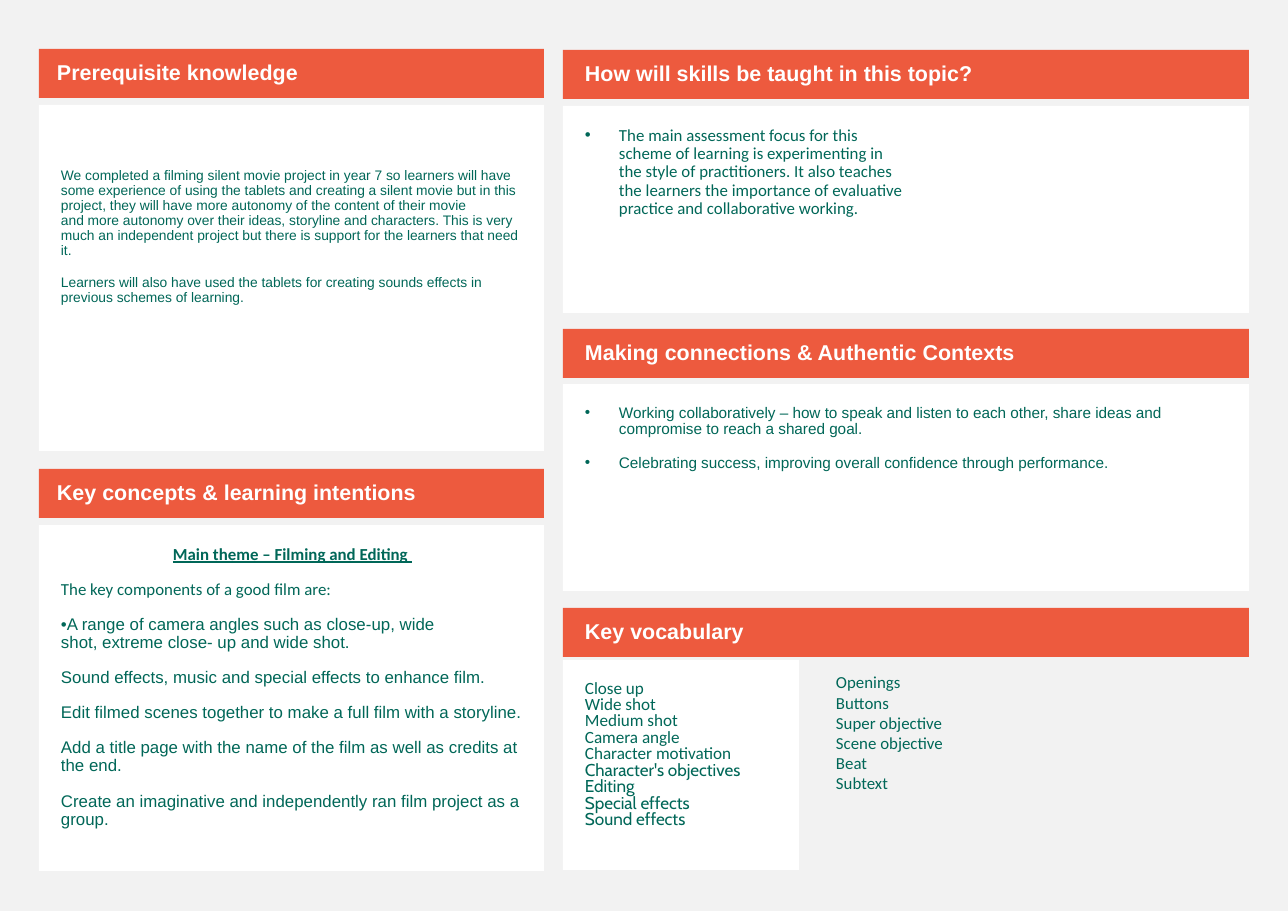
from dataclasses import dataclass

from lxml import etree
from pptx import Presentation
from pptx.dml.color import RGBColor
from pptx.enum.shapes import MSO_SHAPE
from pptx.enum.text import MSO_ANCHOR, PP_ALIGN
from pptx.oxml.ns import qn
from pptx.util import Emu, Pt

RECTANGLE = MSO_SHAPE.RECTANGLE
TOP, MIDDLE = MSO_ANCHOR.TOP, MSO_ANCHOR.MIDDLE
LEFT, CENTER = PP_ALIGN.LEFT, PP_ALIGN.CENTER
NO_BREAK = chr(160)


@dataclass(frozen=True)
class Theme:
    background: str = "F2F2F2"
    panel: str = "FFFFFF"
    header: str = "ED5A3E"
    header_text: str = "FFFFFF"
    body_text: str = "006758"
    sans: str = "Arial"
    humanist: str = "Calibri"
    rounded: str = "Cabin"
    header_size: float = 14
    body_size: float = 11
    vocabulary_size: float = 11.2
    connections_size: float = 10
    prerequisite_size: float = 9
    paragraph_gap: float = 11


THEME = Theme()

# Content
PREREQUISITES = [
    "We completed a filming silent movie project in year 7 so learners will have "
    "some experience of using the tablets and creating a silent movie but in this "
    "project, they will have more autonomy of the content of their movie "
    f"and{NO_BREAK}more autonomy over their ideas, storyline and characters. This is very "
    "much an independent project but there is support for the learners that need it. ",
    "Learners will also have used the tablets for creating sounds effects "
    "in previous schemes of learning. ",
]
MAIN_THEME = ["Main theme – Filming and Editing "]
CONCEPT_INTRO = ["The key components of a good film are:"]
CONCEPTS = [
    "•A range of camera angles such as close-up, wide "
    f"shot,{NO_BREAK}extreme close- up and wide shot. ",
    "Sound effects, music and special effects to enhance film.",
    "Edit filmed scenes together to make a full film with a storyline.",
    "Add a title page with the name of the film as well as credits at the end.",
    "Create an imaginative and independently ran film project as a group. ",
]
SKILLS = [
    "The main assessment focus for this scheme of learning is experimenting in "
    "the style of practitioners. It also teaches the learners the importance of "
    "evaluative practice and collaborative working. ",
]
CONNECTIONS = [
    "Working collaboratively – how to speak and listen to each other, share ideas "
    "and compromise to reach a shared goal.",
    "Celebrating success, improving overall confidence through performance.",
]
SHOT_WORDS = ["Close up", "Wide shot", "Medium shot", "Camera angle", "Character motivation "]
EFFECT_WORDS = ["Character's objectives ", "Editing ", "Special effects", "Sound effects "]
DRAMA_WORDS = ["Openings", "Buttons ", "Super objective", "Scene objective ", "Beat", "Subtext"]

# Layout in px
SLIDE_WIDTH, SLIDE_HEIGHT = 1288, 911
EMU_PER_PX = 914400 / 110.2
HEADER_HEIGHT = 49
PADDING = 22
TOP_PADDING, RIGHT_PADDING = 21, 20
BULLET_INDENT = 34
LEFT_COLUMN, RIGHT_COLUMN = (39, 505), (563, 686)
VOCABULARY_COLUMN = (563, 236)

# Title, column, top, left inset
HEADERS = [
    ("Prerequisite knowledge", LEFT_COLUMN, 49, 18),
    ("Key concepts & learning intentions", LEFT_COLUMN, 469, 18),
    ("How will skills be taught in this topic?", RIGHT_COLUMN, 50, PADDING),
    ("Making connections & Authentic Contexts", RIGHT_COLUMN, 329, PADDING),
    ("Key vocabulary", RIGHT_COLUMN, 608, PADDING),
]


def px(length):
    return Emu(round(length * EMU_PER_PX))


def color(value):
    return RGBColor.from_string(value)


def style(font, size, **options):
    return dict(font=font, size=size, **options)


def set_insets(frame, left, top, right, bottom):
    frame.margin_left, frame.margin_top = px(left), px(top)
    frame.margin_right, frame.margin_bottom = px(right), px(bottom)


def add_panel(slide, column, top, height, fill, insets, anchor=TOP):
    left, width = column
    shape = slide.shapes.add_shape(RECTANGLE, px(left), px(top), px(width), px(height))
    shape.shadow.inherit = False
    shape.fill.solid()
    shape.fill.fore_color.rgb = color(fill)
    shape.line.fill.background()
    frame = shape.text_frame
    frame.word_wrap = True
    frame.vertical_anchor = anchor
    set_insets(frame, *insets)
    return frame


def add_bullet(paragraph):
    properties = paragraph._p.get_or_add_pPr()
    properties.set("marL", str(px(BULLET_INDENT)))
    properties.set("indent", str(-px(BULLET_INDENT)))
    etree.SubElement(properties, qn("a:buFont"), typeface=THEME.sans)
    etree.SubElement(properties, qn("a:buChar"), char="•")


def write(frame, lines, font, size, ink=THEME.body_text, bold=False, underline=False,
          align=LEFT, spacing=0.9, gap=THEME.paragraph_gap, bullet=False):
    for line in lines:
        first = frame.paragraphs[0]
        paragraph = frame.add_paragraph() if first.runs else first
        paragraph.alignment = align
        paragraph.line_spacing = spacing
        paragraph.space_before = Pt(gap)
        if bullet:
            add_bullet(paragraph)
        run = paragraph.add_run()
        run.text = line
        run.font.name = font
        run.font.size = Pt(size)
        run.font.bold = bold
        run.font.underline = underline
        run.font.color.rgb = color(ink)


# Body panels: column, top, height, top inset, text columns, text blocks
concept_style = style(THEME.humanist, THEME.body_size)
vocabulary = dict(size=THEME.vocabulary_size, spacing=0.8, gap=0)
PANELS = [
    (LEFT_COLUMN, 105, 346, 64, 1,
     [(PREREQUISITES, style(THEME.sans, THEME.prerequisite_size))]),
    (LEFT_COLUMN, 525, 346, TOP_PADDING, 1,
     [(MAIN_THEME, dict(concept_style, bold=True, underline=True, align=CENTER)),
      (CONCEPT_INTRO, concept_style),
      (CONCEPTS, style(THEME.sans, THEME.body_size))]),
    (RIGHT_COLUMN, 106, 207, TOP_PADDING, 2,
     [(SKILLS, dict(concept_style, bullet=True))]),
    (RIGHT_COLUMN, 384, 207, TOP_PADDING, 1,
     [(CONNECTIONS, style(THEME.sans, THEME.connections_size, bullet=True))]),
    (VOCABULARY_COLUMN, 660, 210, TOP_PADDING, 1,
     [(SHOT_WORDS, style(THEME.humanist, **vocabulary)),
      (EFFECT_WORDS, style(THEME.rounded, **vocabulary))]),
]


def main():
    presentation = Presentation()
    presentation.slide_width, presentation.slide_height = px(SLIDE_WIDTH), px(SLIDE_HEIGHT)
    slide = presentation.slides.add_slide(presentation.slide_layouts[6])
    slide.background.fill.solid()
    slide.background.fill.fore_color.rgb = color(THEME.background)

    # Body panels
    for column, top, height, top_inset, text_columns, blocks in PANELS:
        insets = (PADDING, top_inset, RIGHT_PADDING, PADDING)
        frame = add_panel(slide, column, top, height, THEME.panel, insets)
        if text_columns > 1:
            frame._txBody.bodyPr.set("numCol", str(text_columns))
        for lines, text_style in blocks:
            write(frame, lines, **text_style)

    # Header bars
    for title, column, top, inset in HEADERS:
        frame = add_panel(slide, column, top, HEADER_HEIGHT, THEME.header,
                          (inset, 6, 11, 6), MIDDLE)
        write(frame, [title], THEME.sans, THEME.header_size, THEME.header_text, bold=True)

    # Second vocabulary list
    frame = slide.shapes.add_textbox(px(825), px(666), px(217), px(166)).text_frame
    frame.word_wrap = True
    set_insets(frame, 11, 6, 11, 6)
    write(frame, DRAMA_WORDS, THEME.humanist, THEME.body_size, spacing=1.0, gap=0)

    presentation.save("out.pptx")


if __name__ == "__main__":
    main()
